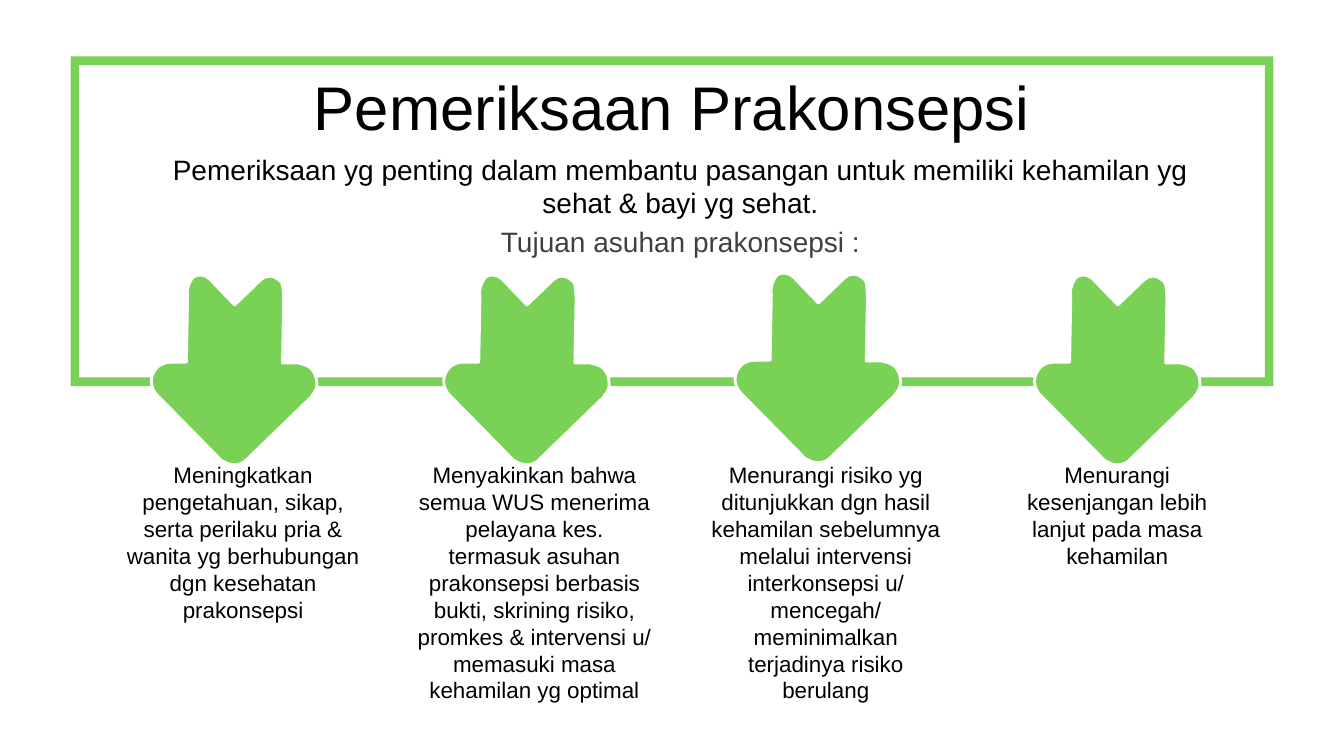
import math
from dataclasses import dataclass

from lxml import etree
from pptx import Presentation, util as u
from pptx.dml.color import RGBColor
from pptx.enum import shapes, text
from pptx.oxml import ns


@dataclass(frozen=True)
class Theme:
    font: str = "Arial"
    green: RGBColor = RGBColor(0x79, 0xD1, 0x55)
    white: RGBColor = RGBColor(0xFF, 0xFF, 0xFF)
    black: RGBColor = RGBColor(0, 0, 0)
    grey: RGBColor = RGBColor(0x40, 0x40, 0x40)
    title: int = 44
    intro: int = 20
    goal: int = 16


ARROW_BOX = (1.49, 2.67, 1.67, 1.68)
ARROW_TURN = 135.4
ARROW_START = (3.15, 3.78)
ARROW_SEGMENTS = [
    (3.16, 3.82, 3.15, 3.87, 3.12, 3.91),
    (3.11, 3.92, 3.1, 3.93, 3.1, 3.94),
    (2.46, 4.56),
    (2.4, 4.63, 2.29, 4.63, 2.22, 4.58),
    (2.22, 4.58),
    (2.21, 4.58),
    (2.2, 4.57, 2.19, 4.56, 2.18, 4.55),
    (1.56, 3.92),
    (1.48, 3.84, 1.48, 3.72, 1.56, 3.64),
    (1.59, 3.61, 1.64, 3.59, 1.69, 3.59),
    (1.71, 3.59),
    (1.71, 3.59),
    (1.85, 3.59),
    (1.86, 2.94),
    (1.85, 2.88, 1.86, 2.82, 1.9, 2.76),
    (1.94, 2.7, 2.03, 2.71, 2.08, 2.76),
    (2.33, 3.02),
    (2.59, 2.77),
    (2.64, 2.72, 2.72, 2.72, 2.77, 2.77),
    (2.81, 2.8, 2.81, 2.8, 2.82, 2.95),
    (2.81, 3.6),
    (2.95, 3.6),
    (2.96, 3.6, 2.98, 3.6, 2.99, 3.61),
    (2.99, 3.61),
    (3, 3.61),
    (3.03, 3.62, 3.07, 3.63, 3.1, 3.66),
    (3.13, 3.7, 3.15, 3.74, 3.15, 3.78),
]

GOALS = [
    "Meningkatkan pengetahuan, sikap, serta perilaku pria & wanita yg berhubungan "
    "dgn kesehatan prakonsepsi",
    "Menyakinkan bahwa semua WUS menerima pelayana kes. termasuk asuhan prakonsepsi "
    "berbasis bukti, skrining risiko, promkes & intervensi u/ memasuki masa "
    "kehamilan yg optimal",
    "Menurangi risiko yg ditunjukkan dgn hasil kehamilan sebelumnya melalui "
    "intervensi interkonsepsi u/ mencegah/ meminimalkan terjadinya risiko berulang",
    "Menurangi kesenjangan lebih lanjut pada masa kehamilan",
]
GOAL_HEIGHTS = [1.72, 2.52, 2.52, 1.18]
ARROW_SHIFTS = [(0, 0), (2.9, 0), (5.79, -0.02), (8.76, 0)]


def unturned(x, y):
    left, top, width, height = ARROW_BOX
    cx, cy = left + width / 2, top + height / 2
    angle = math.radians(-ARROW_TURN)
    cos, sin = math.cos(angle), math.sin(angle)
    return (u.Inches(cx + (x - cx) * cos - (y - cy) * sin),
            u.Inches(cy + (x - cx) * sin + (y - cy) * cos))


class Painter:
    def __init__(self, slide, theme):
        self.slide = slide
        self.theme = theme

    def frame(self, left, top, width, height, thickness):
        border = self.slide.shapes.add_shape(
            shapes.MSO_SHAPE.FRAME, *map(u.Inches, (left, top, width, height)))
        border.adjustments[0] = thickness
        self.paint(border)
        border.line.fill.background()

    def arrow(self, dx, dy):
        builder = self.slide.shapes.build_freeform(*unturned(*ARROW_START))
        builder.add_line_segments([unturned(*segment[i:i + 2]) for segment in ARROW_SEGMENTS
                                   for i in range(0, len(segment), 2)])
        outline = builder.convert_to_shape()
        self.bend(outline)
        left, top, width, height = ARROW_BOX
        outline.left, outline.top = u.Inches(left + dx), u.Inches(top + dy)
        outline.width, outline.height = u.Inches(width), u.Inches(height)
        outline.rotation = ARROW_TURN
        self.paint(outline)
        outline.line.color.rgb = self.theme.white
        outline.line.width = u.Pt(2)

    def bend(self, outline):
        steps = iter(outline.element.xpath(".//a:lnTo"))
        for segment in ARROW_SEGMENTS:
            first = next(steps)
            if len(segment) == 2:
                continue
            curve = etree.Element(ns.qn("a:cubicBezTo"))
            first.addprevious(curve)
            for step in (first, next(steps), next(steps)):
                curve.append(step[0])
                step.getparent().remove(step)

    def paint(self, shape):
        shape.shadow.inherit = False
        shape.fill.solid()
        shape.fill.fore_color.rgb = self.theme.green

    def words(self, left, top, width, height, lines, size, before=0, spacing=None, lift=0,
              anchor=text.MSO_ANCHOR.TOP, fit=text.MSO_AUTO_SIZE.NONE):
        box = self.slide.shapes.add_textbox(*map(u.Inches, (left, top, width, height)))
        body = box.text_frame
        body.word_wrap = True
        body.auto_size = fit
        body.vertical_anchor = anchor
        body.margin_bottom = u.Inches(0.05 + lift)
        body.text = "\n".join(line for line, _ in lines)
        for paragraph, (_, color) in zip(body.paragraphs, lines):
            paragraph.alignment = text.PP_ALIGN.CENTER
            paragraph.space_before = u.Pt(before)
            paragraph.line_spacing = spacing
            paragraph.font.name = self.theme.font
            paragraph.font.size = u.Pt(size)
            paragraph.font.color.rgb = color


def main():
    deck = Presentation()
    deck.slide_width, deck.slide_height = u.Inches(13.33), u.Inches(7.5)
    theme = Theme()
    painter = Painter(deck.slides.add_slide(deck.slide_layouts[6]), theme)

    painter.frame(0.7, 0.56, 11.93, 3.27, 0.026)
    for column, (goal, height) in enumerate(zip(GOALS, GOAL_HEIGHTS)):
        painter.words(1.15 + 2.89 * column, 4.53, 2.52, height, [(goal, theme.black)],
                      theme.goal, fit=text.MSO_AUTO_SIZE.SHAPE_TO_FIT_TEXT)
    painter.words(0, 0.72, 13.33, 0.82, [("Pemeriksaan Prakonsepsi", theme.black)],
                  theme.title, spacing=0.9, lift=0.06, anchor=text.MSO_ANCHOR.MIDDLE)
    painter.words(1.48, 1.46, 10.54, 0.58, [
        ("Pemeriksaan yg penting dalam membantu pasangan untuk memiliki kehamilan yg "
         "sehat & bayi yg sehat.", theme.black),
        ("Tujuan asuhan prakonsepsi :", theme.grey),
    ], theme.intro, before=4)
    for shift in ARROW_SHIFTS:
        painter.arrow(*shift)

    deck.save("out.pptx")


if __name__ == "__main__":
    main()
